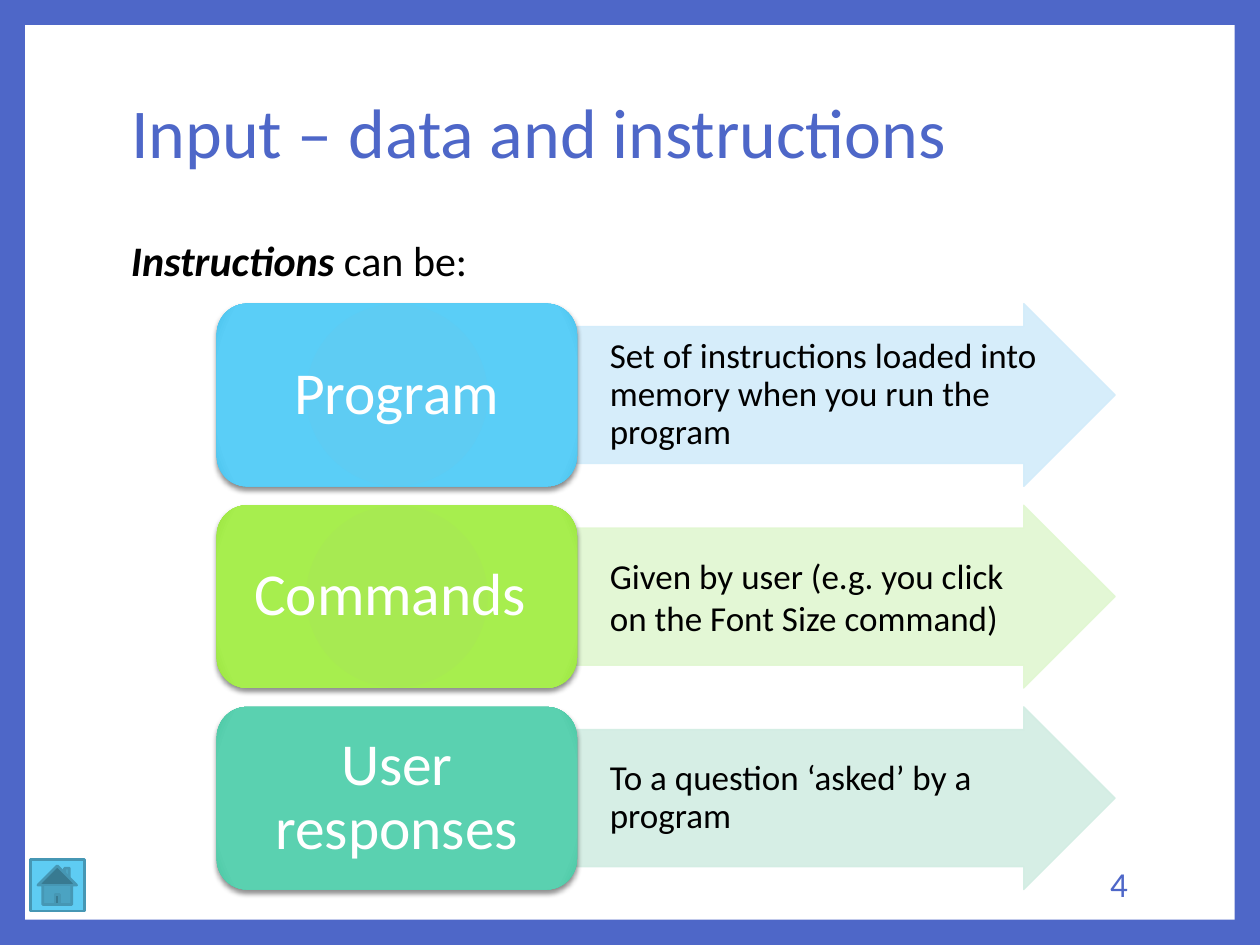
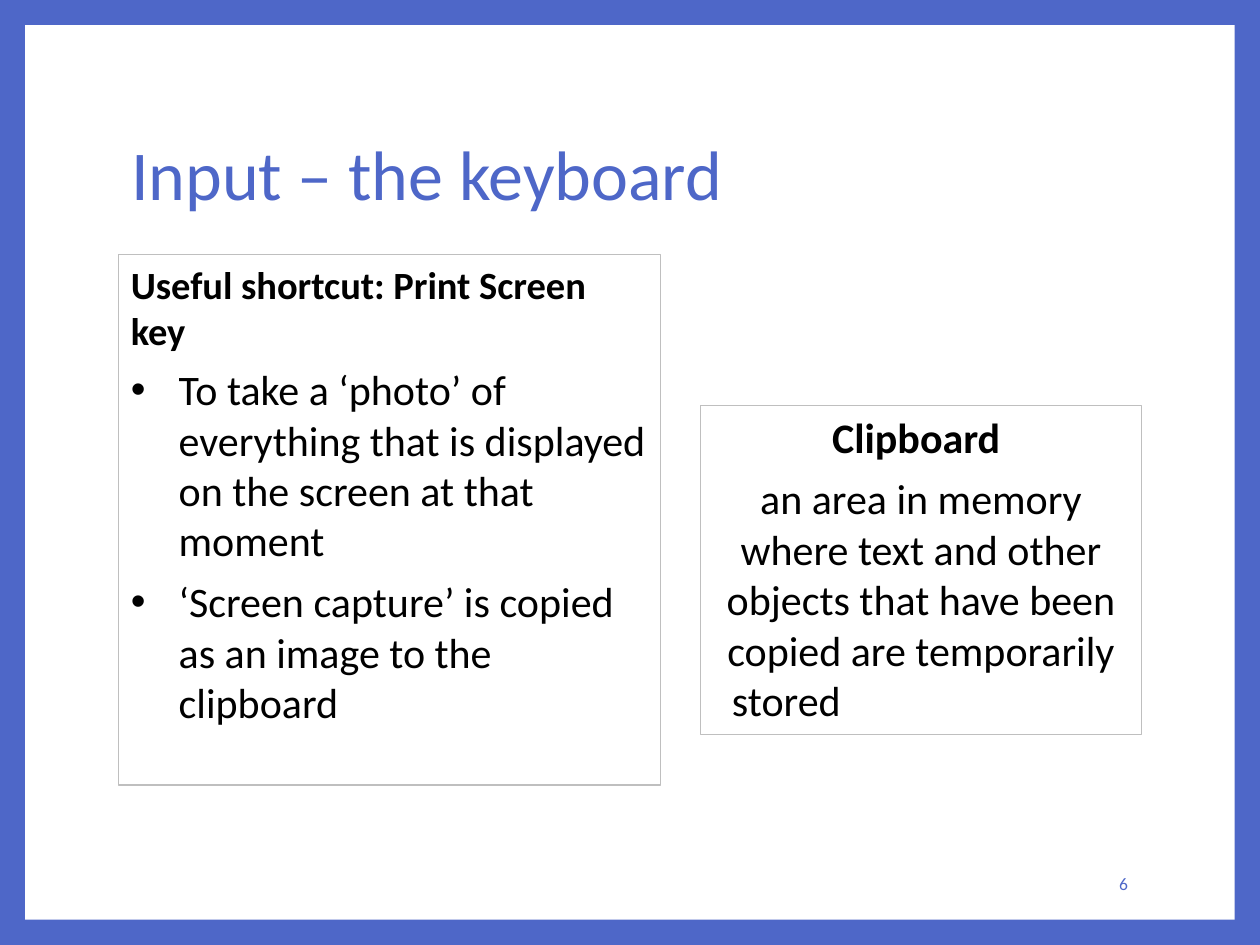
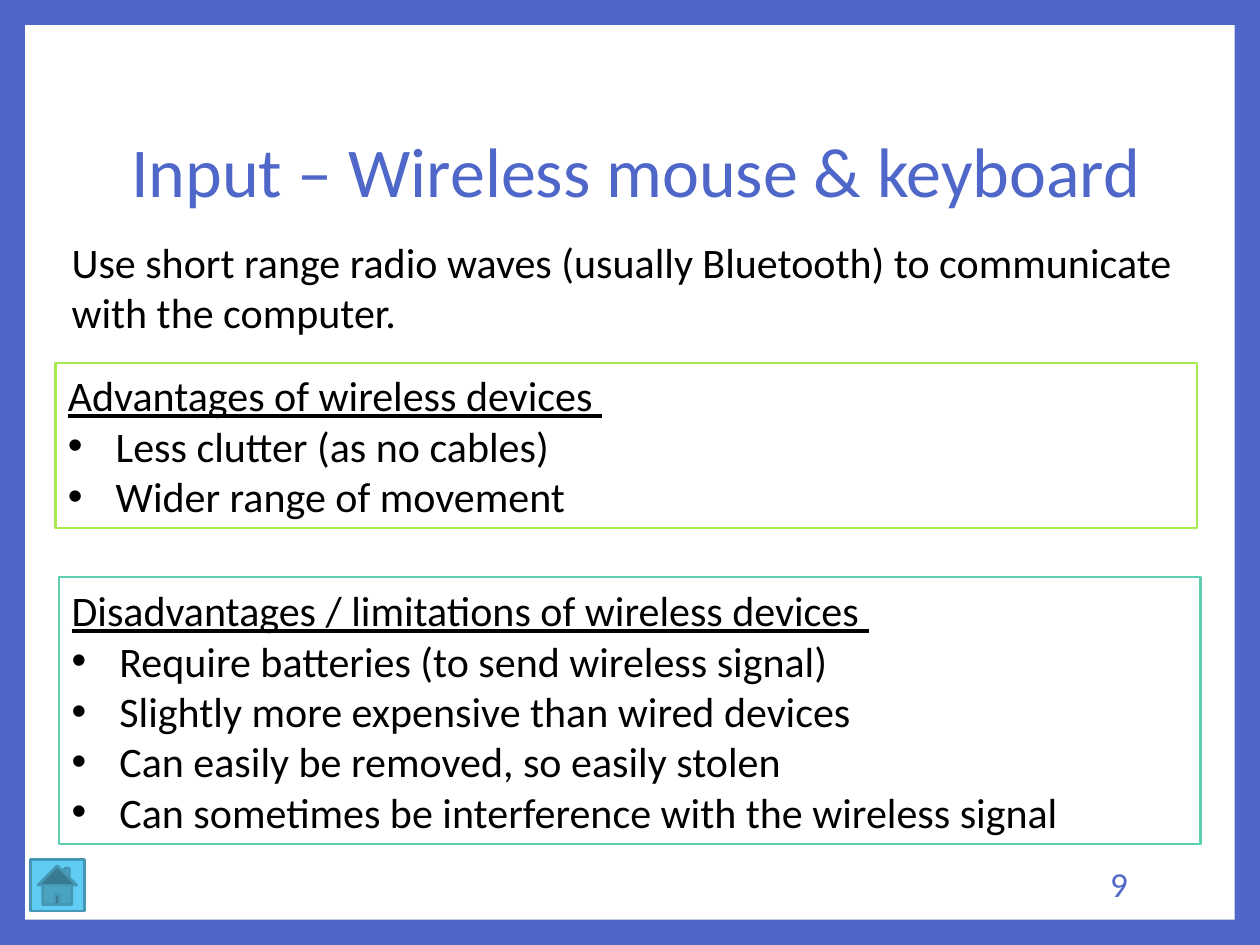
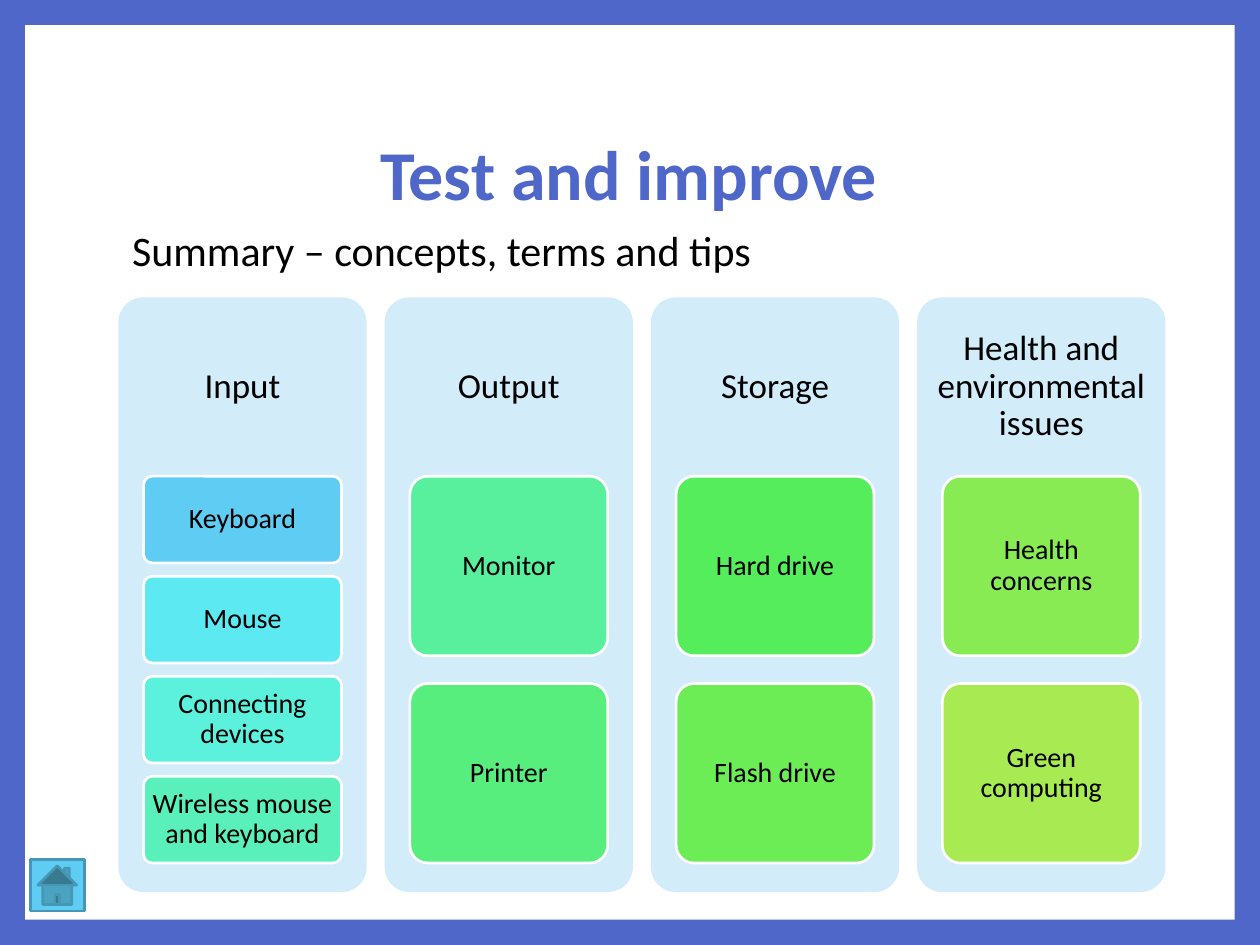
import pptx
import pptx.dml.color
import pptx.enum.shapes
import pptx.enum.text
import pptx.oxml
import pptx.oxml.ns
import pptx.util
from lxml import etree

Inches = pptx.util.Inches
Pt = pptx.util.Pt
RGBColor = pptx.dml.color.RGBColor
MSO_SHAPE = pptx.enum.shapes.MSO_SHAPE
ANCHOR = pptx.enum.text.MSO_ANCHOR
ALIGN = pptx.enum.text.PP_ALIGN
qn = pptx.oxml.ns.qn
NAMESPACE = pptx.oxml.ns.nsdecls("a")

# Shared style
FONT = "Calibri"
BLUE = RGBColor(0x4E, 0x67, 0xC8)
WHITE = RGBColor(0xFF, 0xFF, 0xFF)
BLACK = RGBColor(0, 0, 0)
GREY = RGBColor(0xBF, 0xBF, 0xBF)
SKY = RGBColor(0x5E, 0xCC, 0xF3)
SKY_DARK = RGBColor(0x46, 0x97, 0xB4)
SKY_PALE = RGBColor(0xD2, 0xEC, 0xFA)
LIME = RGBColor(0xA7, 0xEA, 0x52)
LIME_PALE = RGBColor(0xE1, 0xF7, 0xD1)
TEAL = RGBColor(0x5D, 0xCE, 0xAF)
TEAL_PALE = RGBColor(0xD2, 0xED, 0xE3)

# Slide 1: label, label gradient, arrow colour, explanation, line spacing
INSTRUCTIONS = [
    ("Program", ("5ECCF3", "5ACEF7", "48C0EA"), SKY_PALE,
     "Set of instructions loaded into memory when you run the program", 0.9),
    ("Commands ", ("A7EA52", "A7EE4E", "99E23D"), LIME_PALE,
     "Given by user (e.g. you click on the Font Size command)", 1.0),
    ("User responses", ("5DCEAF", "5AD1B0", "4AC5A3"), TEAL_PALE,
     "To a question ‘asked’ by a program", 0.9),
]

# Slide 4: column heading, then its cards with their colours
SUMMARY = [
    ("Input", [("Keyboard", "5ECCF3"), ("Mouse", "5DE9F2"),
               ("Connecting devices", "5BF1DC"),
               ("Wireless mouse and keyboard", "5AF0BC")]),
    ("Output", [("Monitor", "58EF9D"), ("Printer", "57EE7D")]),
    ("Storage", [("Hard drive", "56ED5D"), ("Flash drive", "6CEC55")]),
    ("Health and environmental issues",
     [("Health concerns", "89EB53"), ("Green computing", "A7EA52")]),
]


# XML helpers
def set_alpha(properties, percent):
    for color in properties.iter(qn("a:srgbClr")):
        etree.SubElement(color, qn("a:alpha")).set("val", str(percent * 1000))


def add_paragraph_property(paragraph, xml):
    """Insert ahead of the default run properties, as the schema orders it."""
    default = paragraph._p.get_or_add_pPr().find(qn("a:defRPr"))
    default.addprevious(pptx.oxml.parse_xml(xml))


def add_bullet(paragraph):
    properties = paragraph._p.get_or_add_pPr()
    properties.set("marL", str(Inches(0.38)))
    properties.set("indent", str(-Inches(0.38)))
    add_paragraph_property(paragraph, f'<a:buFont {NAMESPACE} typeface="Arial"/>')
    add_paragraph_property(paragraph, f'<a:buChar {NAMESPACE} char="•"/>')


def add_tab_stop(paragraph, position):
    add_paragraph_property(
        paragraph,
        f'<a:tabLst {NAMESPACE}><a:tab pos="{Inches(position)}" algn="l"/></a:tabLst>')


def set_radial_fill(shape, colors):
    stops = "".join(
        f'<a:gs pos="{position}"><a:srgbClr val="{color}"/></a:gs>'
        for position, color in zip((0, 90000, 100000), colors))
    gradient = pptx.oxml.parse_xml(
        f'<a:gradFill {NAMESPACE} rotWithShape="1"><a:gsLst>{stops}</a:gsLst>'
        '<a:path path="circle"><a:fillToRect l="100000" t="100000" r="100000" b="100000"/>'
        '</a:path></a:gradFill>')
    shape._element.spPr.find(qn("a:prstGeom")).addnext(gradient)


def add_soft_shadow(shape):
    effects = shape._element.spPr.find(qn("a:effectLst"))
    shadow = etree.SubElement(effects, qn("a:outerShdw"), blurRad=str(Pt(3)),
                              dist=str(Pt(2)), dir="5400000", rotWithShape="0")
    color = etree.SubElement(shadow, qn("a:srgbClr"), val="000000")
    etree.SubElement(color, qn("a:alpha"), val="45000")


# Elements
def set_frame(shape, anchor, margins=(0.1, 0.05, 0.1, 0.05)):
    frame = shape.text_frame
    frame.word_wrap = True
    frame.auto_size = pptx.enum.text.MSO_AUTO_SIZE.NONE
    frame.vertical_anchor = anchor
    (frame.margin_left, frame.margin_top,
     frame.margin_right, frame.margin_bottom) = map(Inches, margins)
    return frame


def style(paragraph, size, color=BLACK, align=ALIGN.LEFT, spacing=1.0, after=0,
          bold=False, underline=False):
    paragraph.alignment = align
    paragraph.line_spacing = spacing
    paragraph.space_before = Pt(0)
    paragraph.space_after = Pt(after)
    font = paragraph.font
    font.name, font.size, font.bold, font.underline = FONT, Pt(size), bold, underline
    font.color.rgb = color


def write(shape, text, size, anchor=ANCHOR.MIDDLE, margins=(0.1, 0.05, 0.1, 0.05), **look):
    paragraph = set_frame(shape, anchor, margins).paragraphs[0]
    paragraph.text = text
    style(paragraph, size, **look)
    return paragraph


def add_lines(frame, lines):
    """Each line is its text, whether it has a bullet, and its look."""
    for index, (text, bullet, look) in enumerate(lines):
        paragraph = frame.add_paragraph() if index else frame.paragraphs[0]
        paragraph.text = text
        style(paragraph, **look)
        if bullet:
            add_bullet(paragraph)


def add_box(slide, kind, left, top, width, height, fill=None, line=None, weight=0.75):
    shape = slide.shapes.add_shape(kind, Inches(left), Inches(top), Inches(width), Inches(height))
    shape.shadow.inherit = False
    if fill is None:
        shape.fill.background()
    else:
        shape.fill.solid()
        shape.fill.fore_color.rgb = fill
    if line is None:
        shape.line.fill.background()
    else:
        shape.line.color.rgb = line
        shape.line.width = Pt(weight)
    return shape


def add_text(slide, left, top, width, height, text, size, **options):
    box = slide.shapes.add_textbox(Inches(left), Inches(top), Inches(width), Inches(height))
    return write(box, text, size, **options)


def add_number(slide, number, size=20):
    add_text(slide, 7.65, 6.81, 1.4, 0.4, number, size, color=BLUE, align=ALIGN.RIGHT)


def add_home_button(slide):
    add_box(slide, MSO_SHAPE.ACTION_BUTTON_HOME, 0.24, 6.82, 0.43, 0.41, SKY, SKY_DARK, 1.5)


def add_slide(presentation, title, width=8.1, height=1.48, bottom_margin=0.05, **look):
    slide = presentation.slides.add_slide(presentation.slide_layouts[5])
    shape = slide.shapes.title
    shape.left, shape.top = Inches(0.94), Inches(0.67)
    shape.width, shape.height = Inches(width), Inches(height)
    write(shape, title, 40, margins=(0.1, 0.05, 0.1, bottom_margin),
          color=BLUE, spacing=0.9, **look)
    return slide


def set_master(presentation, slide):
    """Blue border round a white panel, shared by all slides."""
    master = presentation.slide_master
    master.background.fill.solid()
    master.background.fill.fore_color.rgb = BLUE
    panel = add_box(slide, MSO_SHAPE.RECTANGLE, 0.2, 0.2, 9.6, 7.1, WHITE)
    master.shapes._spTree.insert(2, panel._element)


def add_instruction(slide, top, label, gradient, pale, explanation, spacing):
    arrow = add_box(slide, MSO_SHAPE.RIGHT_ARROW, 4.57, top, 4.28, 1.45, pale, pale, 0.79)
    arrow.adjustments[0], arrow.adjustments[1] = 0.75, 0.5
    set_alpha(arrow._element.spPr, 90)
    write(arrow, explanation, 20, margins=(0.27, 0.01, 0.01, 0.01), spacing=spacing)
    tile = add_box(slide, MSO_SHAPE.ROUNDED_RECTANGLE, 1.72, top, 2.86, 1.45)
    tile._element.spPr.remove(tile._element.spPr.find(qn("a:noFill")))
    set_radial_fill(tile, gradient)
    add_soft_shadow(tile)
    write(tile, label, 34, margins=(0.14, 0.07, 0.14, 0.07),
          color=WHITE, align=ALIGN.CENTER, spacing=0.9)


def add_summary_column(slide, left, heading, cards):
    column = add_box(slide, MSO_SHAPE.ROUNDED_RECTANGLE, left, 2.36, 1.97, 4.72, SKY_PALE)
    column.adjustments[0] = 0.1
    add_text(slide, left, 2.36, 1.97, 1.42, heading, 20, margins=(0.08,) * 4,
             align=ALIGN.CENTER, spacing=0.9)
    # Cards share 3.07 inches; each gap is a fixed part of the card height
    gap_ratio = 0.154
    height = 3.07 / (len(cards) + (len(cards) - 1) * gap_ratio)
    for row, (text, color) in enumerate(cards):
        card = add_box(slide, MSO_SHAPE.ROUNDED_RECTANGLE, left + 0.2,
                       3.78 + row * height * (1 + gap_ratio), 1.57, height,
                       RGBColor.from_string(color), WHITE, 1.5)
        card.adjustments[0] = 0.1
        write(card, text, 16, margins=(0.04, 0.03, 0.04, 0.03),
              align=ALIGN.CENTER, spacing=0.9)


def add_list_box(slide, left, top, height, line, heading, items):
    box = add_box(slide, MSO_SHAPE.RECTANGLE, left, top, 9.06, height, WHITE, line, 1.5)
    lines = [(heading, False, {"size": 24, "underline": True})]
    lines += [(item, True, {"size": 24}) for item in items]
    add_lines(set_frame(box, ANCHOR.MIDDLE), lines)


# Slides
def build_instructions(presentation):
    # The deep bottom margin lifts the title above the middle of its box
    slide = add_slide(presentation, "Input – data and instructions", bottom_margin=0.72)
    set_master(presentation, slide)
    paragraph = add_text(slide, 0.94, 1.81, 7.05, 0.5, "Instructions ", 24)
    paragraph.runs[0].font.bold = paragraph.runs[0].font.italic = True
    paragraph.add_run().text = "can be:"
    for row, instruction in enumerate(INSTRUCTIONS):
        add_instruction(slide, 2.41 + 1.6 * row, *instruction)
    add_number(slide, "4")
    add_home_button(slide)


def build_keyboard(presentation):
    slide = add_slide(presentation, "Input – the keyboard")
    add_number(slide, "6", 10)
    shortcut = add_box(slide, MSO_SHAPE.RECTANGLE, 0.94, 2.02, 4.3, 4.21, line=GREY)
    add_lines(set_frame(shortcut, ANCHOR.TOP), [
        ("Useful shortcut: Print Screen key", False, {"size": 22, "bold": True, "after": 6}),
        ("To take a ‘photo’ of everything that is displayed on the screen at that moment",
         True, {"size": 24, "after": 6}),
        ("‘Screen capture’ is copied as an image to the clipboard", True, {"size": 24}),
    ])
    clipboard = add_box(slide, MSO_SHAPE.RECTANGLE, 5.56, 3.22, 3.5, 2.61, line=GREY)
    frame = set_frame(clipboard, ANCHOR.TOP)
    centred = {"size": 24, "align": ALIGN.CENTER, "after": 6}
    add_lines(frame, [
        ("Clipboard ", False, {**centred, "bold": True}),
        ("an area in memory where text and other objects that have been copied "
         "are temporarily stored\t", False, centred),
    ])
    # The closing tab holds the last word at the left of the centred text
    add_tab_stop(frame.paragraphs[1], 3)


def build_wireless(presentation):
    slide = add_slide(presentation, "Input – Wireless mouse & keyboard", 8.59, 1.43)
    add_text(slide, 0.47, 1.82, 9.06, 0.91,
             "Use short range radio waves (usually Bluetooth) to communicate with the computer.", 24)
    add_list_box(slide, 0.44, 2.88, 1.31, LIME, "Advantages of wireless devices ",
                 ["Less clutter (as no cables)", "Wider range of movement"])
    add_list_box(slide, 0.47, 4.58, 2.12, TEAL,
                 "Disadvantages / limitations of wireless devices ",
                 ["Require batteries (to send wireless signal)",
                  "Slightly more expensive than wired devices",
                  "Can easily be removed, so easily stolen",
                  "Can sometimes be interference with the wireless signal"])
    add_number(slide, "9")
    add_home_button(slide)


def build_summary(presentation):
    slide = add_slide(presentation, "Test and improve", align=ALIGN.CENTER, bold=True)
    add_text(slide, 0.95, 1.73, 8.52, 0.5, "Summary – concepts, terms and tips", 24,
             anchor=ANCHOR.TOP)
    pitch = (7.28 - 0.94) / (len(SUMMARY) - 1)
    for index, (heading, cards) in enumerate(SUMMARY):
        add_summary_column(slide, 0.94 + pitch * index, heading, cards)
    add_home_button(slide)


def main():
    presentation = pptx.Presentation()
    presentation.slide_width, presentation.slide_height = Inches(10), Inches(7.5)
    build_instructions(presentation)
    build_keyboard(presentation)
    build_wireless(presentation)
    build_summary(presentation)
    presentation.save("out.pptx")


if __name__ == "__main__":
    main()
